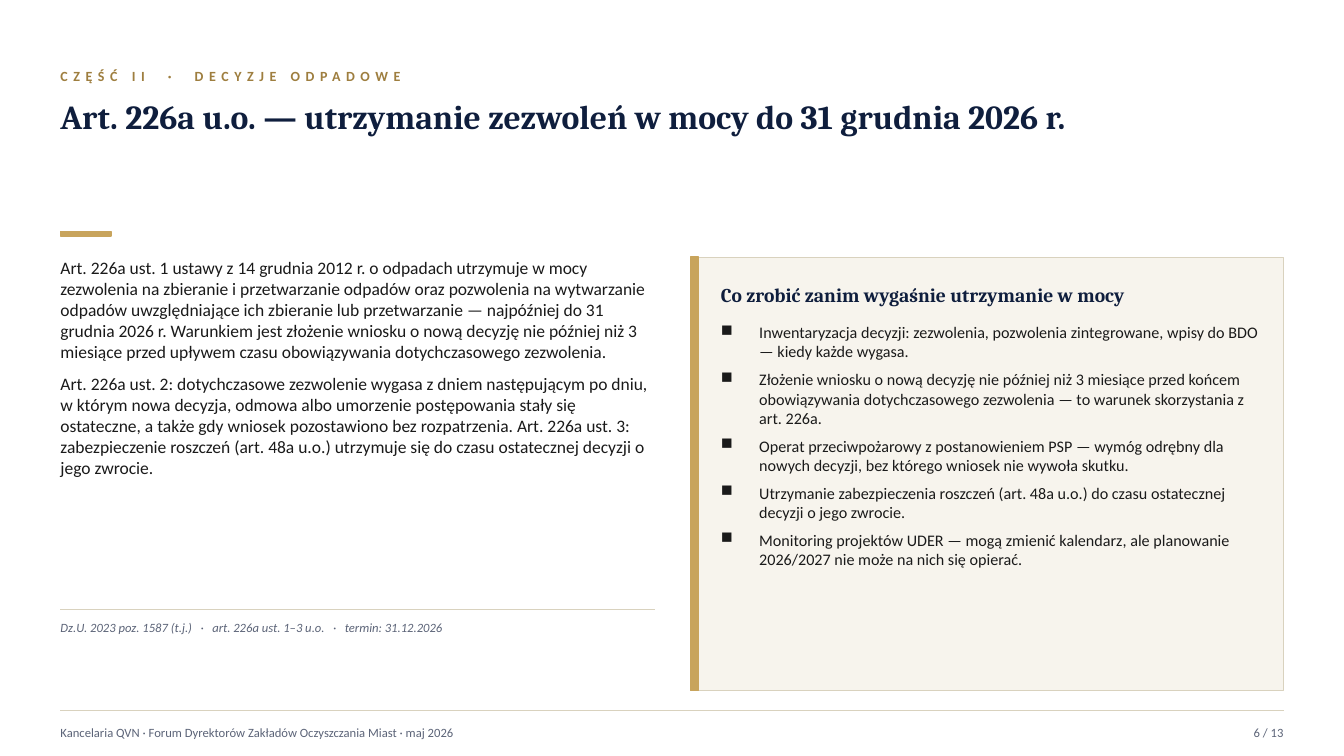
"""Build the slide on art. 226a and keeping waste permits in force."""
from dataclasses import dataclass

from lxml.etree import SubElement
from pptx import Presentation
from pptx.dml.color import RGBColor
from pptx.enum.shapes import MSO_CONNECTOR, MSO_SHAPE
from pptx.enum.text import MSO_ANCHOR as Anchor, MSO_AUTO_SIZE, PP_ALIGN as Align
from pptx.oxml.ns import qn
from pptx.util import Pt

PX = 9144
SLIDE_W, SLIDE_H = 1333, 750
LEFT, RIGHT = 60, 1273
BODY_W, BODY_TOP = 590, 255
PANEL_X, PANEL_H = 685, 430
PANEL_TEXT_X, PANEL_TEXT_W = 715, 545
FOOTER_Y = 705


@dataclass(frozen=True)
class Theme:
    """Fonts, colours and type sizes."""
    sans: str = "Calibri"
    serif: str = "Cambria"
    navy: str = "0F1E3D"
    ink: str = "1A1A1A"
    grey: str = "5C6478"
    gold: str = "C8A45C"
    dark_gold: str = "9E7E3F"
    cream: str = "F7F4ED"
    rule: str = "D9D2BE"
    title: float = 24
    heading: float = 14
    body: float = 12.5
    item: float = 11.5
    kicker: float = 10
    small: float = 9


BODY = [
    "Art. 226a ust. 1 ustawy z 14 grudnia 2012 r. o odpadach utrzymuje w mocy zezwolenia na "
    "zbieranie i przetwarzanie odpadów oraz pozwolenia na wytwarzanie odpadów uwzględniające "
    "ich zbieranie lub przetwarzanie — najpóźniej do 31 grudnia 2026 r. Warunkiem jest złożenie "
    "wniosku o nową decyzję nie później niż 3 miesiące przed upływem czasu obowiązywania "
    "dotychczasowego zezwolenia.",
    "Art. 226a ust. 2: dotychczasowe zezwolenie wygasa z dniem następującym po dniu, w którym "
    "nowa decyzja, odmowa albo umorzenie postępowania stały się ostateczne, a także gdy wniosek "
    "pozostawiono bez rozpatrzenia. Art. 226a ust. 3: zabezpieczenie roszczeń (art. 48a u.o.) "
    "utrzymuje się do czasu ostatecznej decyzji o jego zwrocie.",
]
ACTIONS = [
    "Inwentaryzacja decyzji: zezwolenia, pozwolenia zintegrowane, wpisy do BDO — kiedy każde "
    "wygasa.",
    "Złożenie wniosku o nową decyzję nie później niż 3 miesiące przed końcem obowiązywania "
    "dotychczasowego zezwolenia — to warunek skorzystania z art. 226a.",
    "Operat przeciwpożarowy z postanowieniem PSP — wymóg odrębny dla nowych decyzji, bez "
    "którego wniosek nie wywoła skutku.",
    "Utrzymanie zabezpieczenia roszczeń (art. 48a u.o.) do czasu ostatecznej decyzji o jego "
    "zwrocie.",
    "Monitoring projektów UDER — mogą zmienić kalendarz, ale planowanie 2026/2027 nie może na "
    "nich się opierać.",
]


def write(tf, text, *, size, color, font, bold=False, italic=False, align=Align.LEFT,
          anchor=Anchor.TOP, after=0, tracking=0, bullet=None, indent=38):
    """Fill a text frame with one string or a list of paragraphs."""
    tf.word_wrap = True
    tf.auto_size = MSO_AUTO_SIZE.NONE
    tf.vertical_anchor = anchor
    tf.margin_left = tf.margin_top = tf.margin_right = tf.margin_bottom = 0
    for i, line in enumerate([text] if isinstance(text, str) else text):
        p = tf.add_paragraph() if i else tf.paragraphs[0]
        if bullet:
            pPr = p._p.get_or_add_pPr()
            pPr.set("marL", str(indent * PX))
            pPr.set("indent", str(-indent * PX))
            SubElement(pPr, qn("a:buChar")).set("char", bullet)
        p.alignment = align
        p.space_after = Pt(after)
        r = p.add_run()
        r.text = line
        r.font.name, r.font.size = font, Pt(size)
        r.font.bold, r.font.italic = bold, italic
        r.font.color.rgb = RGBColor.from_string(color)
        if tracking:
            r._r.get_or_add_rPr().set("spc", str(tracking * 100))


class Deck:
    """Holds the theme and the current slide."""

    def __init__(self, theme):
        self.theme = theme
        self.prs = Presentation()
        self.prs.slide_width, self.prs.slide_height = SLIDE_W * PX, SLIDE_H * PX
        self.s = self.prs.slides.add_slide(self.prs.slide_layouts[5])

    def title(self, x, y, w, h, text, **fmt):
        """Place and format the title placeholder."""
        sp = self.s.shapes.title
        sp.left, sp.top, sp.width, sp.height = (v * PX for v in (x, y, w, h))
        write(sp.text_frame, text, **fmt)

    def text(self, x, y, w, h, text, **fmt):
        """Add a text box."""
        sp = self.s.shapes.add_textbox(*(v * PX for v in (x, y, w, h)))
        write(sp.text_frame, text, **{"font": self.theme.sans, **fmt})

    def rect(self, x, y, w, h, fill, line, weight=1):
        """Add a filled and outlined rectangle."""
        sp = self.s.shapes.add_shape(MSO_SHAPE.RECTANGLE, *(v * PX for v in (x, y, w, h)))
        sp.shadow.inherit = False
        sp.fill.solid()
        sp.fill.fore_color.rgb = RGBColor.from_string(fill)
        sp.line.color.rgb = RGBColor.from_string(line)
        sp.line.width = Pt(weight)

    def rule(self, x1, x2, y, weight):
        """Add a horizontal line."""
        ends = (v * PX for v in (x1, y, x2, y))
        cxn = self.s.shapes.add_connector(MSO_CONNECTOR.STRAIGHT, *ends)
        cxn.line.color.rgb = RGBColor.from_string(self.theme.rule)
        cxn.line.width = Pt(weight)
        SubElement(cxn._element.spPr, qn("a:effectLst"))


def main():
    """Draw the slide and save it."""
    t = Theme()
    d = Deck(t)
    d.text(LEFT, 60, 600, 30, "CZĘŚĆ II  ·  DECYZJE ODPADOWE", size=t.kicker,
           color=t.dark_gold, bold=True, tracking=4, anchor=Anchor.MIDDLE)
    d.title(LEFT, 95, 1210, 130,
            "Art. 226a u.o. — utrzymanie zezwoleń w mocy do 31 grudnia 2026 r.",
            size=t.title, color=t.navy, font=t.serif, bold=True)
    d.rect(LEFT, 230, 50, 4, t.gold, t.gold)

    d.text(LEFT, BODY_TOP, BODY_W, 345, BODY, size=t.body, color=t.ink, after=8)
    d.rule(LEFT, LEFT + BODY_W, 605, 0.5)
    d.text(LEFT, 615, BODY_W, 70,
           "Dz.U. 2023 poz. 1587 (t.j.)   ·   art. 226a ust. 1–3 u.o.   ·   termin: 31.12.2026",
           size=t.small, color=t.grey, italic=True)

    d.rect(PANEL_X, BODY_TOP, RIGHT - PANEL_X, PANEL_H, t.cream, t.rule, 0.5)
    d.rect(PANEL_X, BODY_TOP, 8, PANEL_H, t.gold, t.gold)
    d.text(PANEL_TEXT_X, 270, PANEL_TEXT_W, 45, "Co zrobić zanim wygaśnie utrzymanie w mocy",
           size=t.heading, color=t.navy, font=t.serif, bold=True, anchor=Anchor.MIDDLE)
    d.text(PANEL_TEXT_X, 320, PANEL_TEXT_W, 355, ACTIONS, size=t.item, color=t.ink,
           after=6, bullet="■")

    footer = dict(size=t.small, color=t.grey, anchor=Anchor.MIDDLE)
    d.rule(LEFT, RIGHT, FOOTER_Y, 0.75)
    d.text(LEFT, FOOTER_Y + 7, 900, 30,
           "Kancelaria QVN · Forum Dyrektorów Zakładów Oczyszczania Miast · maj 2026", **footer)
    d.text(RIGHT - 73, FOOTER_Y + 7, 73, 30, "6 / 13", align=Align.RIGHT, **footer)
    d.prs.save("out.pptx")


if __name__ == "__main__":
    main()
